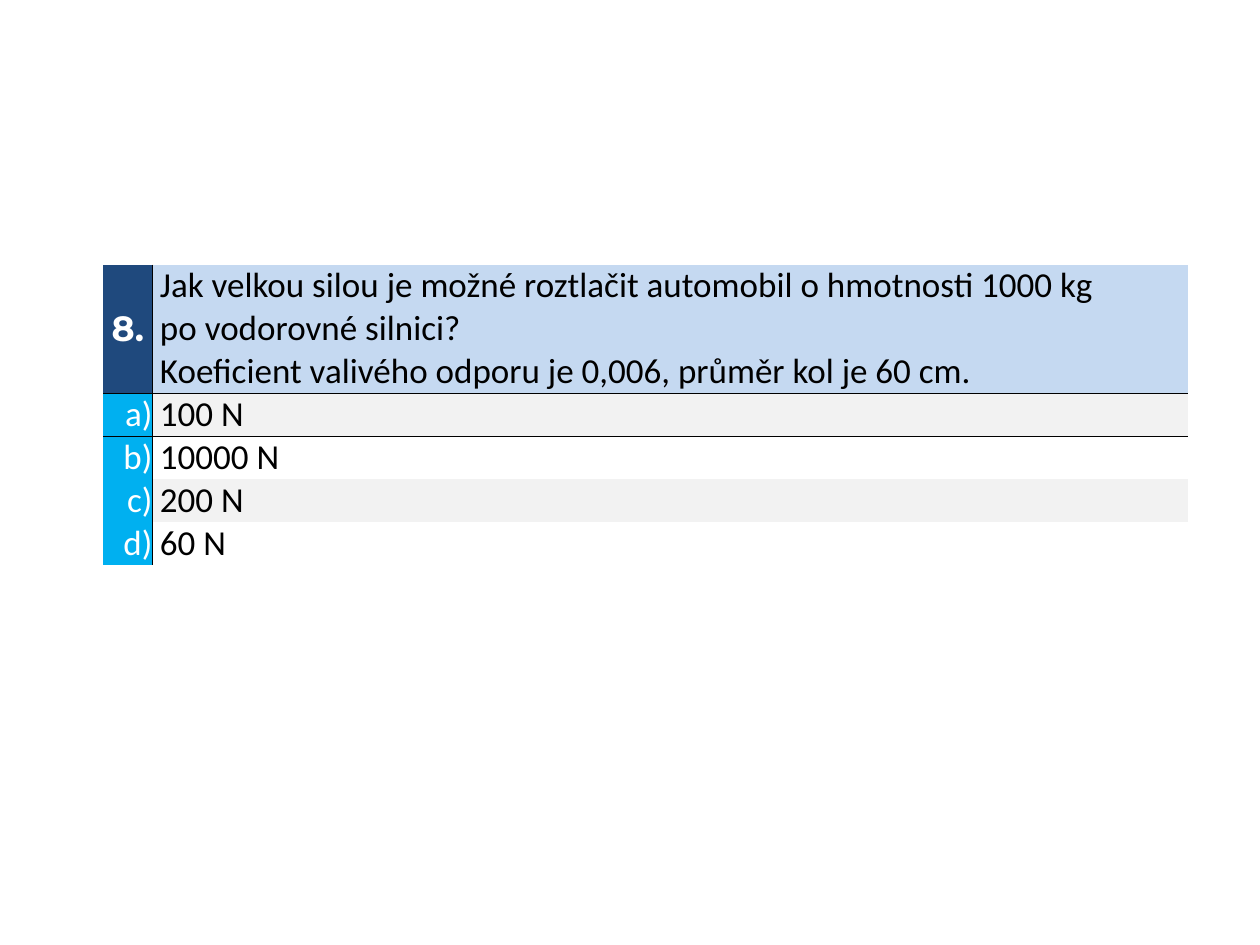
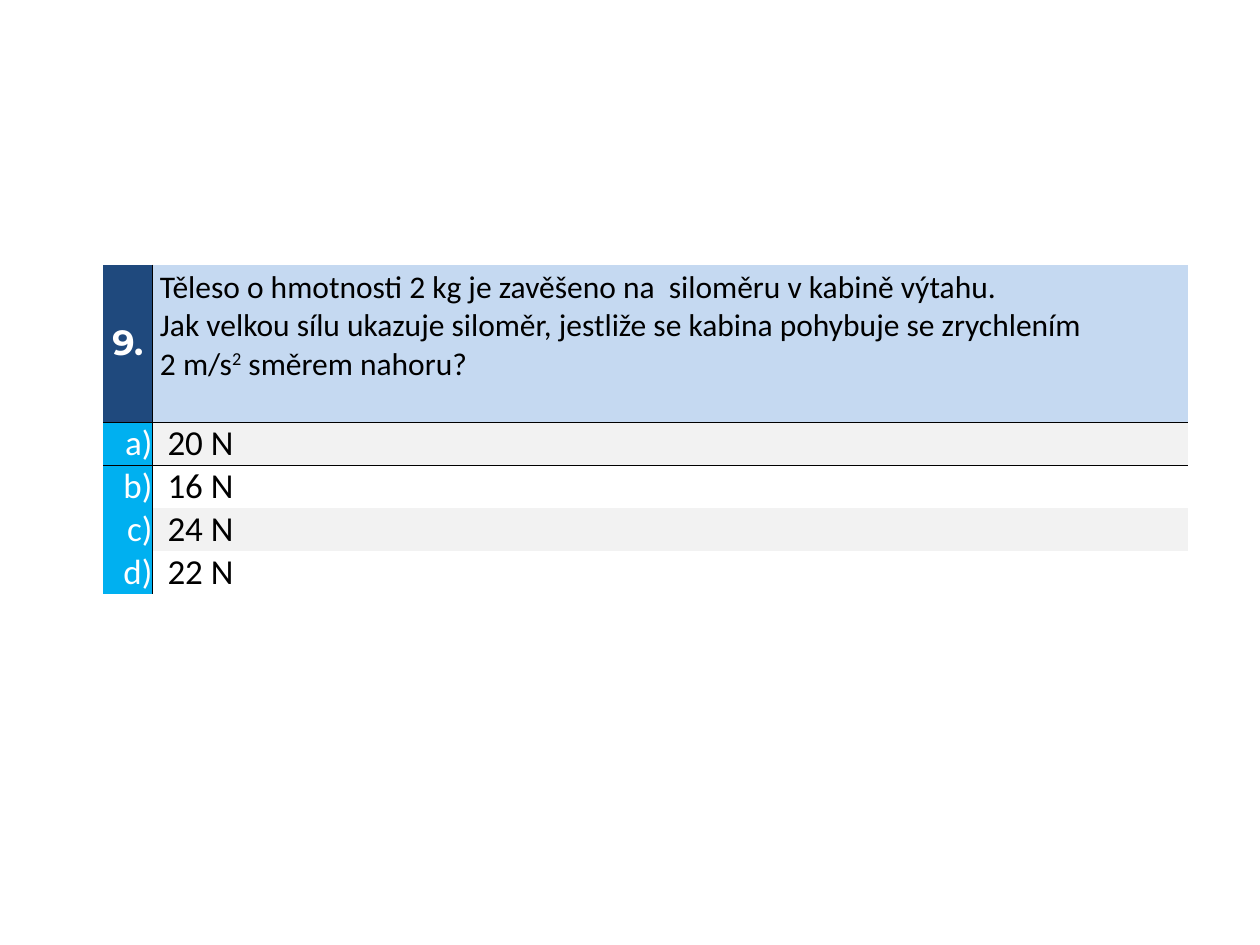
from dataclasses import dataclass

from lxml.etree import SubElement
from pptx import Presentation
from pptx.dml.color import RGBColor
from pptx.enum.text import MSO_ANCHOR, PP_ALIGN
from pptx.oxml.ns import qn
from pptx.util import Inches, Pt

SLIDE_WIDTH, SLIDE_HEIGHT = Inches(10), Inches(7.5)
QUIZ_LEFT, QUIZ_TOP = 0.082 * SLIDE_WIDTH, 0.28 * SLIDE_HEIGHT
LETTER_WIDTH, TEXT_WIDTH = 0.039 * SLIDE_WIDTH, 0.822 * SLIDE_WIDTH
ANSWER_HEIGHT = Inches(0.34)
SPACE = Inches(0.06)
PLAIN_TABLE_STYLE = "{2D5ABB26-0587-4C30-8999-92F81FD0307C}"


@dataclass(frozen=True)
class Theme:
    number_fill: str = "1F497D"
    question_fill: str = "C5D9F1"
    letter_fill: str = "00B0F0"
    stripe_fill: str = "F2F2F2"
    light: str = "FFFFFF"
    dark: str = "000000"
    body_font: str = "Calibri"
    number_font: str = "Montserrat"
    size: int = 20
    small_size: int = 18
    rule_width: float = 0.5


THEME = Theme()


@dataclass(frozen=True)
class Question:
    """Each line is a list of strings; a string starting with ^ is a superscript."""
    number: str
    lines: list
    answers: list
    height: float
    size: int = THEME.size
    top_inset: float = 0
    answer_inset: int = SPACE


QUESTIONS = [
    Question(
        "8.",
        [["Jak velkou silou je možné roztlačit automobil o hmotnosti 1000 kg"],
         ["po vodorovné silnici?"],
         ["Koeficient valivého odporu je 0,006, průměr kol je 60 cm."]],
        ["100 N", "10000 N", "200 N", "60 N"],
        height=1.02),
    Question(
        "9.",
        [["Těleso o hmotnosti 2 kg je zavěšeno na  siloměru v kabině výtahu."],
         ["Jak velkou sílu ukazuje siloměr, jestliže se kabina pohybuje se zrychlením"],
         ["2 m/s", "^2", " směrem nahoru?"]],
        ["20 N", "16 N", "24 N", "22 N"],
        height=1.25, size=THEME.small_size, top_inset=0.03,
        answer_inset=2 * SPACE),
]


def add_run(paragraph, text, color, size=THEME.size, font=THEME.body_font, bold=False):
    run = paragraph.add_run()
    run.text = text.removeprefix("^")
    run.font.name, run.font.size, run.font.bold = font, Pt(size), bold
    run.font.color.rgb = RGBColor.from_string(color)
    if text.startswith("^"):
        run.font._element.set("baseline", "30000")


def style_cell(cell, fill, anchor, align=PP_ALIGN.LEFT, left=0, top=0):
    """Set fill, insets and alignment, and return the paragraph to write in."""
    if fill:
        cell.fill.solid()
        cell.fill.fore_color.rgb = RGBColor.from_string(fill)
    else:
        cell.fill.background()
    cell.margin_left, cell.margin_top = left, top
    cell.margin_right = cell.margin_bottom = 0
    cell.vertical_anchor = anchor
    paragraph = cell.text_frame.paragraphs[0]
    paragraph.alignment = align
    return paragraph


def rule_edges(cell, edges):
    """Draw thin rules on the given edges, listed in the order L, R, T, B."""
    properties = cell._tc.get_or_add_tcPr()
    for position, edge in enumerate(edges):
        line = SubElement(properties, qn(f"a:ln{edge}"), w=str(Pt(THEME.rule_width)))
        solid = SubElement(line, qn("a:solidFill"))
        SubElement(solid, qn("a:srgbClr"), val=THEME.dark)
        properties.insert(position, line)


def fill_question(number_cell, text_cell, question):
    paragraph = style_cell(number_cell, THEME.number_fill, MSO_ANCHOR.MIDDLE,
                           PP_ALIGN.CENTER)
    add_run(paragraph, question.number, THEME.light, font=THEME.number_font, bold=True)
    paragraph = style_cell(text_cell, THEME.question_fill, MSO_ANCHOR.TOP,
                           left=SPACE, top=Inches(question.top_inset))
    for index, line in enumerate(question.lines):
        if index:
            paragraph.add_line_break()
        for text in line:
            add_run(paragraph, text, THEME.dark, question.size)


def fill_answer(letter_cell, text_cell, letter, answer, striped, inset):
    paragraph = style_cell(letter_cell, THEME.letter_fill, MSO_ANCHOR.MIDDLE,
                           PP_ALIGN.RIGHT)
    add_run(paragraph, f"{letter})", THEME.light)
    paragraph = style_cell(text_cell, THEME.stripe_fill if striped else None,
                           MSO_ANCHOR.BOTTOM, left=inset)
    add_run(paragraph, answer, THEME.dark)


def add_quiz_table(slide, question):
    heights = [Inches(question.height)] + [ANSWER_HEIGHT] * len(question.answers)
    frame = slide.shapes.add_table(
        len(heights), 2, int(QUIZ_LEFT), int(QUIZ_TOP),
        int(LETTER_WIDTH + TEXT_WIDTH), sum(heights))
    table = frame.table
    table.first_row = table.horz_banding = False
    table._tbl.tblPr.find(qn("a:tableStyleId")).text = PLAIN_TABLE_STYLE
    for column, width in zip(table.columns, (LETTER_WIDTH, TEXT_WIDTH)):
        column.width = int(width)
    for row, height in zip(table.rows, heights):
        row.height = height

    fill_question(table.cell(0, 0), table.cell(0, 1), question)
    for row, (letter, answer) in enumerate(zip("abcd", question.answers), start=1):
        fill_answer(table.cell(row, 0), table.cell(row, 1), letter, answer,
                    row % 2 == 1, question.answer_inset)
    for row in range(len(heights)):
        across = {0: "B", 1: "T"}.get(row, "")
        rule_edges(table.cell(row, 0), "R" + across)
        rule_edges(table.cell(row, 1), "L" + across)


def main():
    deck = Presentation()
    deck.slide_width, deck.slide_height = SLIDE_WIDTH, SLIDE_HEIGHT
    for question in QUESTIONS:
        add_quiz_table(deck.slides.add_slide(deck.slide_layouts[6]), question)
    deck.save("out.pptx")


if __name__ == "__main__":
    main()
